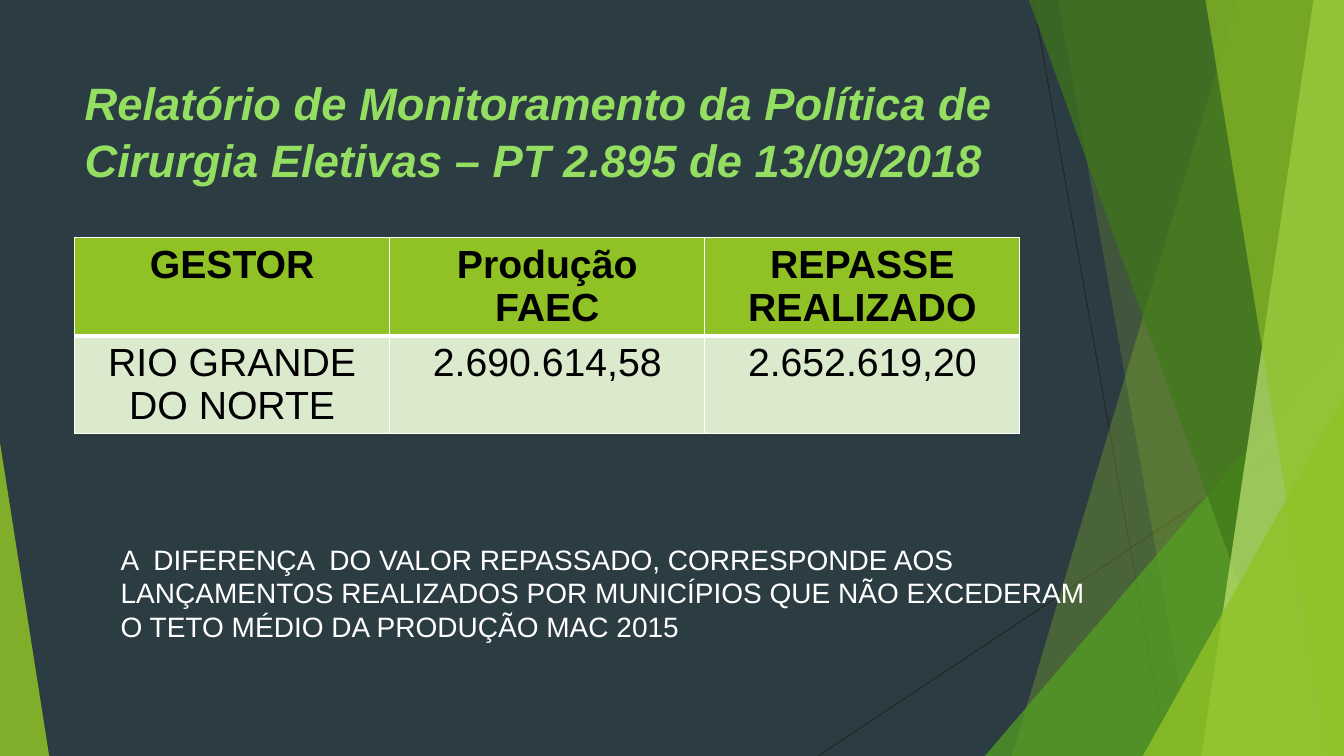
import pptx
import pptx.util
import pptx.dml.color
import pptx.enum.shapes
import pptx.enum.text
import pptx.oxml
import pptx.oxml.ns
from pptx.util import Cm, Pt

# Content
TITLE = "Relatório de Monitoramento da Política de Cirurgia Eletivas – PT 2.895 de 13/09/2018"
TABLE_ROWS = [
    ("GESTOR", "Produção FAEC", "REPASSE REALIZADO"),
    ("RIO GRANDE DO NORTE", "2.690.614,58", "2.652.619,20"),
]
NOTES = [
    "A  DIFERENÇA  DO VALOR REPASSADO, CORRESPONDE AOS LANÇAMENTOS "
    "REALIZADOS POR MUNICÍPIOS QUE NÃO EXCEDERAM",
    "O TETO MÉDIO DA PRODUÇÃO MAC 2015",
]

# Formats (lengths in centimetres)
WIDTH, HEIGHT = 33.87, 19.05
TITLE_FONT = {"name": "Arial", "size": Pt(32.4), "bold": True, "italic": True}
NOTE_FONT = {"name": "Arial", "size": Pt(20)}
ROW_FONTS = [{"name": "Arial", "size": Pt(28), "bold": True},
             {"name": "Arial", "size": Pt(28), "bold": False}]
ROW_FILLS = ["90C226", "DBE9CD"]
ROW_BORDERS = [{"lnL": 1, "lnR": 1, "lnT": 1, "lnB": 3},
               {"lnL": 1, "lnR": 1, "lnT": 3, "lnB": 1}]

# Decoration, back to front
THIN_LINES = [(26.04, 0, 29.41, HEIGHT), (WIDTH, 10.24, 20.62, HEIGHT)]
# Bands: top-left x, bottom-left x; each reaches the right edge of the slide
# Triangles: left, top, width, apex position; each stands on the bottom edge
FACETS = [
    ("band", (31.19, 25.5), "90C226", 30),
    ("band", (26.67, 30.05), "90C226", 20),
    ("triangle", (24.82, 8.46, 9.05, 1), "54A021", 72),
    ("band", (25.93, 32.79), "3F7819", 70),
    ("band", (33.1, 30.28), "C0E474", 70),
    ("band", (30.38, 33.48), "90C226", 65),
    ("triangle", (28.8, 9.98, 5.07, 1), "90C226", 80),
    ("triangle", (0, 11.15, 1.24, 0), "90C226", 85),
]


def color(hex_string):
    return pptx.dml.color.RGBColor.from_string(hex_string)


def paint(fill, hex_string, opacity=100):
    fill.solid()
    fill.fore_color.rgb = color(hex_string)
    if opacity < 100:
        rgb = fill._xPr.find(".//" + pptx.oxml.ns.qn("a:srgbClr"))
        alpha = pptx.oxml.parse_xml(
            f'<a:alpha {pptx.oxml.ns.nsdecls("a")} val="{opacity * 1000}"/>')
        rgb.append(alpha)


def write(paragraph, text, font_values, hex_string):
    run = paragraph.add_run()
    run.text = text
    for name, value in font_values.items():
        setattr(run.font, name, value)
    run.font.color.rgb = color(hex_string)


def add_thin_line(slide, ends):
    line = slide.shapes.add_connector(
        pptx.enum.shapes.MSO_CONNECTOR.STRAIGHT, *map(Cm, ends))
    line.line.color.rgb = color("262626")
    line.line.width = Pt(0.75)
    line._element.spPr.append(
        pptx.oxml.parse_xml(f'<a:effectLst {pptx.oxml.ns.nsdecls("a")}/>'))


def add_facet(slide, kind, geometry, hex_string, opacity):
    if kind == "band":
        top_x, bottom_x = geometry
        builder = slide.shapes.build_freeform(Cm(top_x), 0)
        corners = [(WIDTH, 0), (WIDTH, HEIGHT), (bottom_x, HEIGHT)]
        builder.add_line_segments([(Cm(x), Cm(y)) for x, y in corners], close=True)
        shape = builder.convert_to_shape()
    else:
        left, top, width, apex = geometry
        shape = slide.shapes.add_shape(
            pptx.enum.shapes.MSO_SHAPE.ISOSCELES_TRIANGLE,
            Cm(left), Cm(top), Cm(width), Cm(HEIGHT - top))
        shape.adjustments[0] = apex
    shape.shadow.inherit = False
    shape.line.fill.background()
    paint(shape.fill, hex_string, opacity)


def set_borders(cell, widths):
    properties = cell._tc.get_or_add_tcPr()
    for position, (side, points) in enumerate(widths.items()):
        border = pptx.oxml.parse_xml(
            f'<a:{side} {pptx.oxml.ns.nsdecls("a")} w="{Pt(points)}">'
            f'<a:solidFill><a:srgbClr val="FFFFFF"/></a:solidFill></a:{side}>')
        properties.insert(position, border)


def add_title(slide):
    title = slide.shapes.title
    title.left, title.top, title.width, title.height = map(Cm, (1.88, 1.7, 24.89, 3.66))
    frame = title.text_frame
    frame.word_wrap = True
    frame.auto_size = pptx.enum.text.MSO_AUTO_SIZE.NONE
    frame.vertical_anchor = pptx.enum.text.MSO_ANCHOR.TOP
    paragraph = frame.paragraphs[0]
    paragraph.alignment = pptx.enum.text.PP_ALIGN.LEFT
    paragraph.line_spacing = 1.05
    write(paragraph, TITLE, TITLE_FONT, "94DE61")
    # Bring the title in front of the decoration
    slide.shapes._spTree.append(title._element)


def add_values_table(slide):
    table = slide.shapes.add_table(
        len(TABLE_ROWS), len(TABLE_ROWS[0]),
        Cm(1.88), Cm(5.99), Cm(23.82), Cm(4.94)).table
    formats = zip(TABLE_ROWS, ROW_FONTS, ROW_FILLS, ROW_BORDERS)
    for row, (texts, font_values, fill, borders) in enumerate(formats):
        for column, text in enumerate(texts):
            cell = table.cell(row, column)
            paint(cell.fill, fill)
            set_borders(cell, borders)
            paragraph = cell.text_frame.paragraphs[0]
            paragraph.alignment = pptx.enum.text.PP_ALIGN.CENTER
            write(paragraph, text, font_values, "000000")


def add_notes_box(slide):
    box = slide.shapes.add_textbox(Cm(2.79), Cm(13.54), Cm(25.55), Cm(2.82))
    frame = box.text_frame
    frame.word_wrap = True
    for index, text in enumerate(NOTES):
        paragraph = frame.add_paragraph() if index else frame.paragraphs[0]
        write(paragraph, text, NOTE_FONT, "FFFFFF")


def main():
    presentation = pptx.Presentation()
    presentation.slide_width, presentation.slide_height = Cm(WIDTH), Cm(HEIGHT)
    slide = presentation.slides.add_slide(
        presentation.slide_layouts.get_by_name("Title Only"))
    paint(slide.background.fill, "2C3C43")
    for ends in THIN_LINES:
        add_thin_line(slide, ends)
    for facet in FACETS:
        add_facet(slide, *facet)
    add_title(slide)
    add_values_table(slide)
    add_notes_box(slide)
    presentation.save("out.pptx")


if __name__ == "__main__":
    main()
